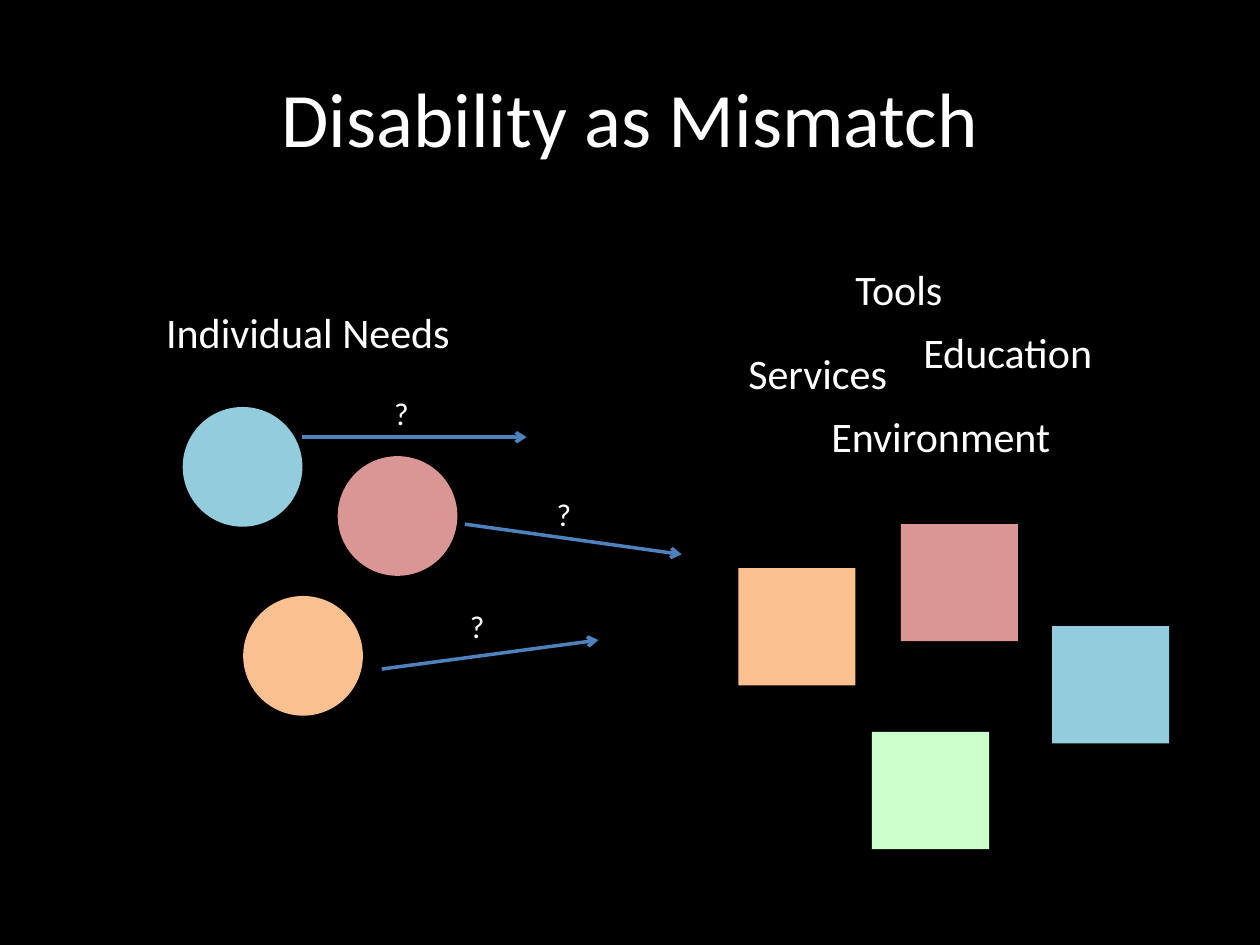
from collections import namedtuple

from lxml.etree import SubElement
from pptx import Presentation
from pptx.dml.color import RGBColor
from pptx.enum.shapes import MSO_CONNECTOR, MSO_SHAPE
from pptx.enum.text import MSO_ANCHOR, MSO_AUTO_SIZE, PP_ALIGN
from pptx.oxml.ns import qn
from pptx.util import Inches, Pt

Box = namedtuple("Box", "left top width height")

COLUMNS, ROWS = 100, 75
CELL = Inches(10) / COLUMNS
BLUE, ROSE, ORANGE, GREEN = "93CDDD", "D99694", "FAC090", "CCFFCC"
WHITE, BLACK, ARROW = "FFFFFF", "000000", "4F81BD"


def color(hex_code):
    """Turn a hex string into a colour."""
    return RGBColor.from_string(hex_code)


def cells(*counts):
    """Convert grid cells to slide lengths."""
    return [round(count * CELL) for count in counts]


def inside(region, left, top, width, height):
    """Place a box relative to the corner of its region."""
    return Box(region.left + left, region.top + top, width, height)


def add_text(slide, box, text, size=24, align=PP_ALIGN.LEFT,
             anchor=MSO_ANCHOR.TOP, wrap=False):
    """Write one line of white text in a box."""
    label = slide.shapes.add_textbox(*cells(*box))
    frame = label.text_frame
    frame.word_wrap = wrap
    frame.auto_size = MSO_AUTO_SIZE.NONE if wrap else MSO_AUTO_SIZE.SHAPE_TO_FIT_TEXT
    frame.vertical_anchor = anchor
    paragraph = frame.paragraphs[0]
    paragraph.alignment = align
    run = paragraph.add_run()
    run.text = text
    run.font.name = "Calibri"
    run.font.size = Pt(size)
    run.font.color.rgb = color(WHITE)


def add_figure(slide, kind, box, fill):
    """Draw a plain filled figure without outline."""
    figure = slide.shapes.add_shape(kind, *cells(*box))
    figure.shadow.inherit = False
    figure.fill.solid()
    figure.fill.fore_color.rgb = color(fill)
    figure.line.fill.background()


def add_arrow(slide, region, start, end):
    """Draw an arrow between two points of a region."""
    ends = [origin + offset for point in (start, end)
            for origin, offset in zip(region[:2], point)]
    arrow = slide.shapes.add_connector(MSO_CONNECTOR.STRAIGHT, *cells(*ends))
    arrow.line.color.rgb = color(ARROW)
    arrow.line.width = Pt(2)
    SubElement(arrow.line._get_or_add_ln(), qn("a:tailEnd"), type="arrow")
    SubElement(arrow._element.spPr, qn("a:effectLst"))


def add_title(slide, region):
    """Centre the title in its region."""
    add_text(slide, region, "Disability as Mismatch", size=44,
             align=PP_ALIGN.CENTER, anchor=MSO_ANCHOR.MIDDLE, wrap=True)


def add_needs(slide, region):
    """Show individual needs as circles, each with an arrow in doubt."""
    add_text(slide, inside(region, 0, 0, 24.8, 5), "Individual Needs")
    diameter = 9.5
    needs = [
        (BLUE, (2.3, 8.5), (11.8, 10.9), (29.6, 10.9), (18.1, 7)),
        (ORANGE, (7.1, 23.5), (18.1, 29.3), (35.3, 27), (24.1, 23.9)),
        (ROSE, (14.6, 12.4), (24.7, 17.8), (41.9, 20.2), (31, 15)),
    ]
    for fill, corner, start, end, doubt in needs:
        add_figure(slide, MSO_SHAPE.OVAL,
                   inside(region, *corner, diameter, diameter), fill)
        add_arrow(slide, region, start, end)
        add_text(slide, inside(region, *doubt, 3.2, 4), "?", size=18)


def add_supports(slide, region):
    """Name the supports and show them as squares."""
    names = [("Services", 0, 6.7, 13.1), ("Education", 13.9, 5, 15.7),
             ("Tools", 8.5, 0, 9.3), ("Environment", 6.6, 11.7, 19.7)]
    for name, left, top, width in names:
        add_text(slide, inside(region, left, top, width, 5), name)
    side = 9.3
    squares = [(GREEN, 10.8, 37.7), (ORANGE, 0.2, 24.7),
               (ROSE, 13.1, 21.2), (BLUE, 25.1, 29.3)]
    for fill, left, top in squares:
        add_figure(slide, MSO_SHAPE.RECTANGLE,
                   inside(region, left, top, side, side), fill)


def main():
    """Build and save the slide."""
    deck = Presentation()
    deck.slide_width, deck.slide_height = cells(COLUMNS, ROWS)
    slide = deck.slides.add_slide(deck.slide_layouts[6])
    slide.background.fill.solid()
    slide.background.fill.fore_color.rgb = color(BLACK)
    add_title(slide, Box(5, 3, 90, 12.5))
    add_needs(slide, Box(12.2, 23.8, 42, 33))
    add_supports(slide, Box(58.4, 20.4, 34.4, 47))
    deck.save("out.pptx")


if __name__ == "__main__":
    main()
